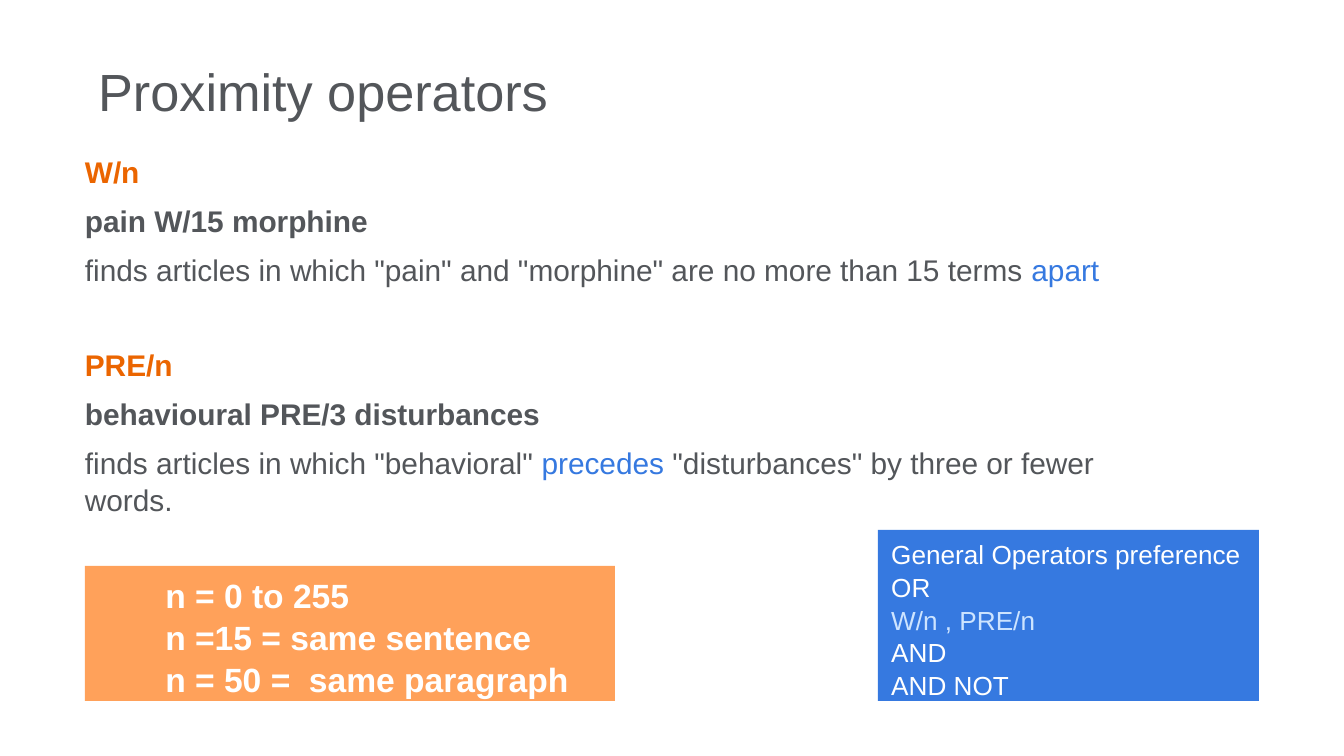
"""Build the slide on proximity operators."""
from pptx import Presentation
from pptx import util as u
from pptx.dml.color import RGBColor
from pptx.enum import shapes, text

PX = 914400 / 134.4
SLIDE = (1344, 756)
LEFT, RIGHT, BOTTOM = 85, 1259, 701
FONT = "Arial"
LINE_SPACING = 1.05
AFTER, SECTION_GAP = 6, 31
COLORS = {"grey": "53565A", "orange": "EB6500", "blue": "3679E0",
          "peach": "FFA15A", "white": "FFFFFF", "pale": "CDE4FF"}

TITLE = [[("Proximity operators", "grey", False)]]
OPERATORS = [
    ("W/n", "pain W/15 morphine", [
        ('finds articles in which "pain" and "morphine" are no more than 15 terms ', "grey", False),
        ("apart", "blue", False)]),
    ("PRE/n", "behavioural PRE/3 disturbances", [
        ('finds articles in which "behavioral" ', "grey", False),
        ("precedes ", "blue", False),
        ('"disturbances" by three or fewer words.', "grey", False)]),
]
RANGES = ["n = 0 to 255", "n =15 = same sentence", "n = 50 =  same paragraph"]
PREFERENCE = [("General Operators preference", "white"), ("OR", "white"),
              ("W/n , PRE/n", "pale"), ("AND", "white"), ("AND\u00a0NOT", "white")]


def px(*lengths):
    return [u.Emu(round(length * PX)) for length in lengths]


def rgb(name):
    return RGBColor.from_string(COLORS[name])


def write(frame, lines, size):
    frame.word_wrap = True
    frame.text = "\n".join("" for _ in lines)
    for paragraph, line in zip(frame.paragraphs, lines):
        paragraph.alignment = text.PP_ALIGN.LEFT
        paragraph.line_spacing = LINE_SPACING
        for words, color, bold in line:
            run = paragraph.add_run()
            run.text = words
            run.font.name, run.font.size, run.font.bold = FONT, u.Pt(size), bold
            run.font.color.rgb = rgb(color)
    return frame.paragraphs


def add_panel(slide, left, top, width, fill, lines, size):
    panel = slide.shapes.add_shape(
        shapes.MSO_SHAPE.RECTANGLE, *px(left, top, width, BOTTOM - top))
    panel.shadow.inherit = False
    panel.fill.solid()
    panel.fill.fore_color.rgb = rgb(fill)
    panel.line.fill.background()
    panel.text_frame.vertical_anchor = text.MSO_ANCHOR.TOP
    return write(panel.text_frame, lines, size)


def main():
    deck = Presentation()
    deck.slide_width, deck.slide_height = px(*SLIDE)
    slide = deck.slides.add_slide(deck.slide_layouts[6])

    title = slide.shapes.add_textbox(*px(LEFT, 55, RIGHT - LEFT, 69)).text_frame
    title.vertical_anchor = text.MSO_ANCHOR.MIDDLE
    write(title, TITLE, 28)

    body = slide.shapes.add_textbox(*px(LEFT, 152, 1068, 368)).text_frame
    body.margin_left = body.margin_right = body.margin_top = body.margin_bottom = 0
    lines = []
    for operator, example, meaning in OPERATORS:
        lines += [[(operator, "orange", True)], [(example, "grey", True)], meaning]
    per_operator = len(lines) // len(OPERATORS)
    for index, paragraph in enumerate(write(body, lines, 16), 1):
        ends_section = index % per_operator == 0 and index < len(lines)
        paragraph.space_after = u.Pt(SECTION_GAP if ends_section else AFTER)

    ranges = [[(line, "white", True)] for line in RANGES]
    for paragraph in add_panel(slide, LEFT, 566, 530, "peach", ranges, 18):
        properties = paragraph._p.get_or_add_pPr()
        properties.set("marL", str(u.Inches(0.5)))
        properties.set("indent", "0")

    preference = [[(line, color, False)] for line, color in PREFERENCE]
    add_panel(slide, 878, 530, RIGHT - 878, "blue", preference, 14)

    deck.save("out.pptx")


if __name__ == "__main__":
    main()
